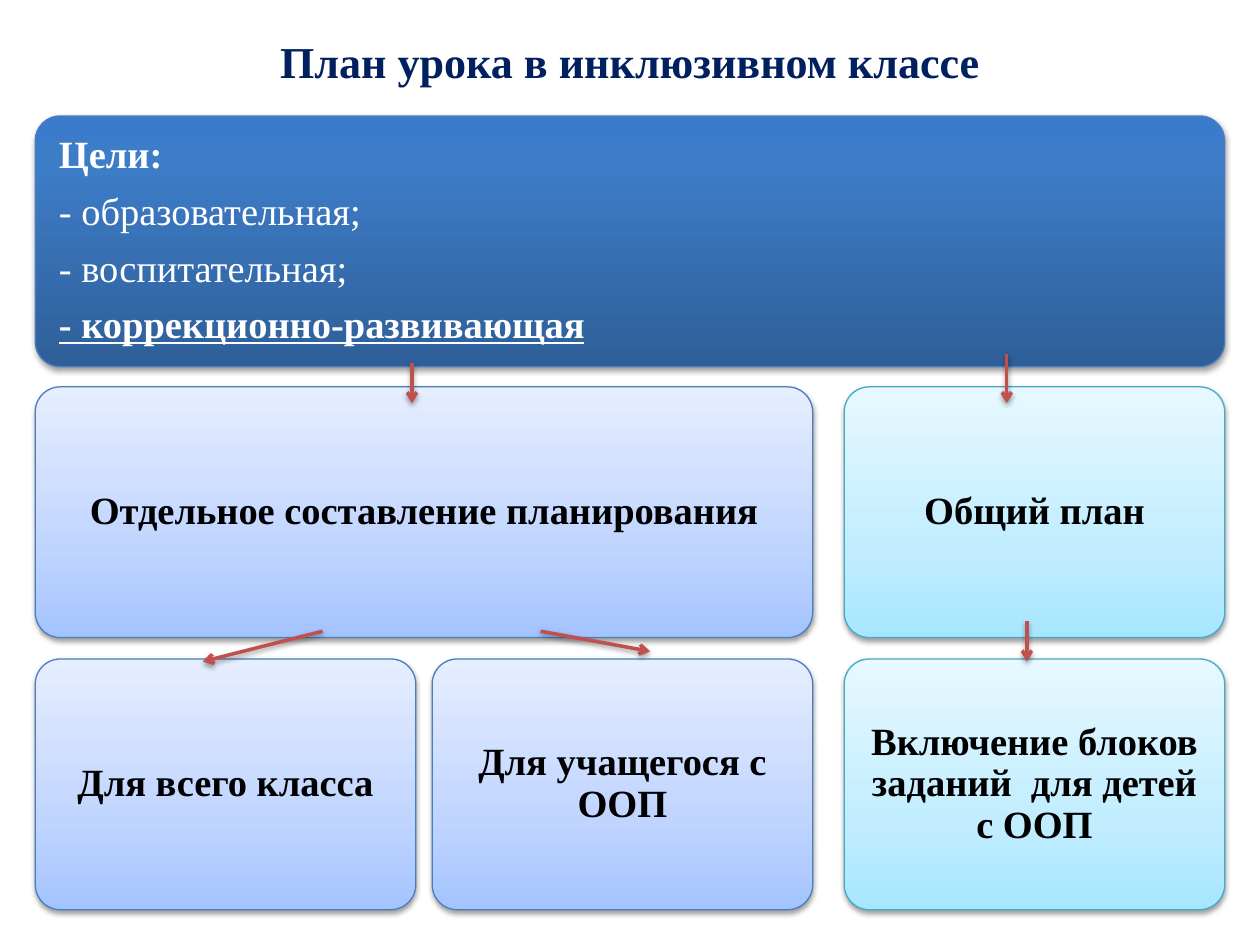
from lxml.etree import SubElement
from pptx import Presentation
from pptx.dml.color import RGBColor
from pptx.enum.shapes import MSO_CONNECTOR, MSO_SHAPE
from pptx.enum.text import MSO_ANCHOR, PP_ALIGN
from pptx.oxml.ns import qn
from pptx.util import Inches, Pt

FONT = "Times New Roman"
COLUMN_LEFTS = (0.28, 3.43, 6.7)
ROW_TOPS = (0.92, 3.07, 5.23)
CARD_WIDTH = 3.02
CARD_HEIGHT = 1.99
NAVY = ([(0, "2F5F99"), (80, "3D7CC7"), (100, "3A7CCB")], "4B7EBC", "FFFFFF")
BLUE = ([(0, "A4C4FF"), (35, "BFD4FF"), (100, "E6EEFF")], "4B7EBC", "000000")
CYAN = ([(0, "A7E6FF"), (35, "C1EDFF"), (100, "E7F8FF")], "46AAC5", "000000")

GOALS = [
    "Цели:",
    "- образовательная;",
    "- воспитательная;",
    "- коррекционно-развивающая",
]
PLAN_CARDS = [
    (1, 0, 1, BLUE, "Отдельное составление планирования"),
    (2, 0, 0, BLUE, "Для всего класса"),
    (2, 1, 1, BLUE, "Для учащегося с ООП"),
    (1, 2, 2, CYAN, "Общий план"),
    (2, 2, 2, CYAN, "Включение блоков заданий  для детей с ООП"),
]
ARROWS = [
    (3.27, 2.88, 3.27, 3.2),
    (2.56, 5.01, 1.61, 5.25),
    (4.29, 5.01, 5.16, 5.17),
    (7.99, 2.81, 7.99, 3.2),
    (8.15, 4.93, 8.15, 5.25),
]


def color(value):
    return RGBColor.from_string(value)


def format_runs(paragraph, size, value, bold=True, underline=False):
    for run in paragraph.runs:
        run.font.name = FONT
        run.font.size = Pt(size)
        run.font.bold = bold
        run.font.underline = underline
        run.font.color.rgb = color(value)


def add_color(parent, value):
    element = SubElement(parent, qn("a:srgbClr"), val=value)
    return element


def add_shadow(properties):
    effects = properties.find(qn("a:effectLst"))
    if effects is None:
        effects = SubElement(properties, qn("a:effectLst"))
    shadow = SubElement(
        effects, qn("a:outerShdw"), blurRad=str(Pt(3.1)), dist=str(Pt(1.6)),
        dir="5400000", rotWithShape="0",
    )
    SubElement(add_color(shadow, "000000"), qn("a:alpha"), val="38000")


def fill_gradient(shape, stops):
    shape.fill.gradient()
    shape.fill.gradient_angle = 90
    stop_list = shape._element.spPr.find(qn("a:gradFill")).find(qn("a:gsLst"))
    for stop in list(stop_list):
        stop_list.remove(stop)
    for position, value in stops:
        add_color(SubElement(stop_list, qn("a:gs"), pos=str(position * 1000)), value)


def add_title(slide, text):
    title = slide.shapes.title
    title.left, title.top = Inches(0.5), Inches(0.21)
    title.width, title.height = Inches(9), Inches(0.55)
    title.text_frame.text = text
    title.text_frame.vertical_anchor = MSO_ANCHOR.MIDDLE
    paragraph = title.text_frame.paragraphs[0]
    paragraph.alignment = PP_ALIGN.CENTER
    format_runs(paragraph, 25.2, "002060")


def add_card(slide, row, first_column, last_column, style, text, alignment=PP_ALIGN.CENTER):
    stops, line_color, text_color = style
    left = COLUMN_LEFTS[first_column]
    width = COLUMN_LEFTS[last_column] + CARD_WIDTH - left
    shape = slide.shapes.add_shape(
        MSO_SHAPE.ROUNDED_RECTANGLE, Inches(left), Inches(ROW_TOPS[row]),
        Inches(width), Inches(CARD_HEIGHT),
    )
    shape.adjustments[0] = 0.1
    fill_gradient(shape, stops)
    shape.line.color.rgb = color(line_color)
    shape.line.width = Pt(0.75)
    shape.shadow.inherit = False
    add_shadow(shape._element.spPr)
    frame = shape.text_frame
    frame.word_wrap = True
    frame.vertical_anchor = MSO_ANCHOR.MIDDLE
    frame.margin_left = frame.margin_right = Inches(0.13)
    frame.margin_top = frame.margin_bottom = Inches(0.13)
    frame.text = text
    for paragraph in frame.paragraphs:
        paragraph.alignment = alignment
        paragraph.line_spacing = 0.9
        paragraph.space_after = Pt(8.7)
        format_runs(paragraph, 22, text_color)
    return shape


def add_goals(slide):
    card = add_card(slide, 0, 0, 2, NAVY, "\n".join(GOALS), PP_ALIGN.LEFT)
    paragraphs = card.text_frame.paragraphs
    for paragraph in paragraphs[1:-1]:
        format_runs(paragraph, 22, "FFFFFF", bold=False)
    format_runs(paragraphs[-1], 22, "FFFFFF", underline=True)


def add_arrow(slide, *ends):
    connector = slide.shapes.add_connector(
        MSO_CONNECTOR.STRAIGHT, *[Inches(value) for value in ends]
    )
    connector.line.color.rgb = color("C0504D")
    connector.line.width = Pt(2)
    properties = connector._element.spPr
    SubElement(properties.find(qn("a:ln")), qn("a:tailEnd"), type="arrow")
    add_shadow(properties)


def main():
    presentation = Presentation()
    presentation.slide_width = Inches(10)
    presentation.slide_height = Inches(7.5)
    slide = presentation.slides.add_slide(presentation.slide_layouts[5])
    add_title(slide, "План урока в инклюзивном классе")
    add_goals(slide)
    for card in PLAN_CARDS:
        add_card(slide, *card)
    for arrow in ARROWS:
        add_arrow(slide, *arrow)
    presentation.save("out.pptx")


if __name__ == "__main__":
    main()
